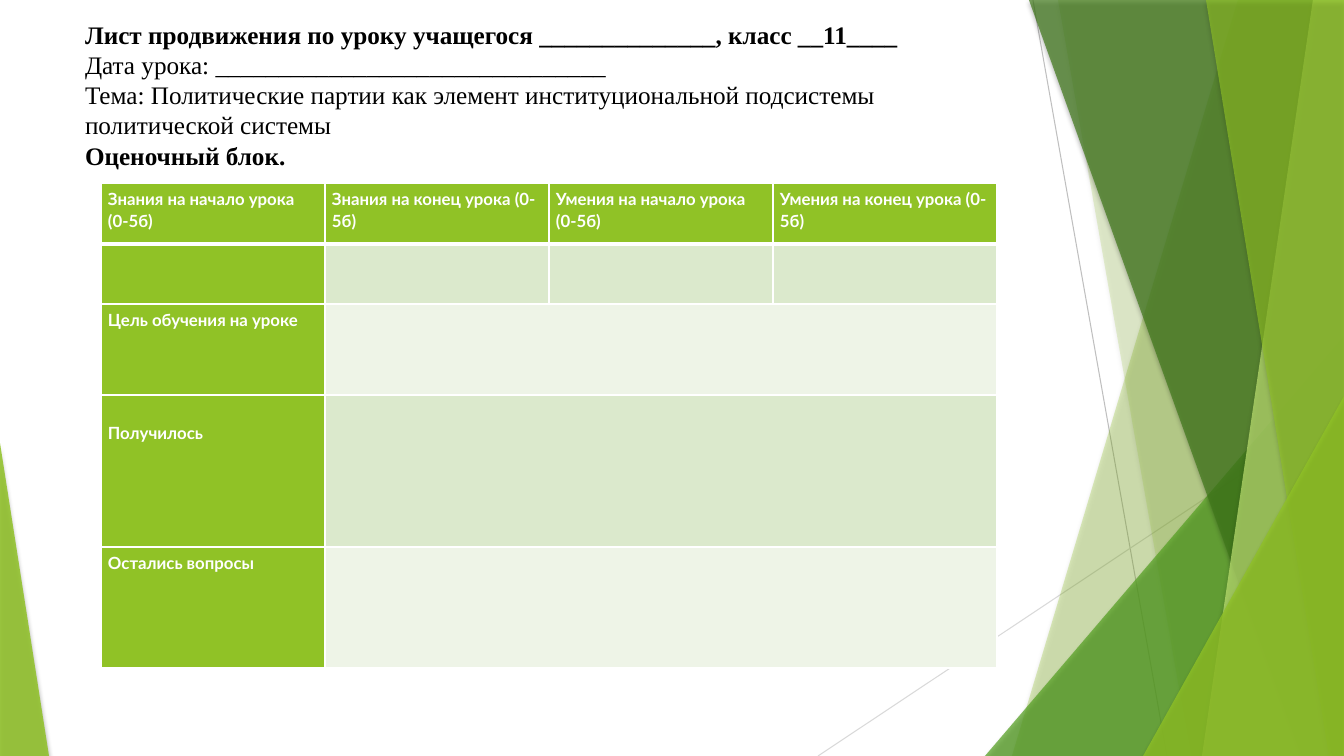
from lxml import etree
from pptx import Presentation
from pptx import util as u
from pptx.dml.color import RGBColor
from pptx.enum import shapes, text
from pptx.oxml.ns import qn

WIDTH, HEIGHT = 1344, 756
COLORS = {
    "black": "000000", "white": "FFFFFF", "lime": "90C226", "green": "54A021",
    "forest": "3F7819", "pale lime": "C0E474", "band dark": "DBE9CC",
    "band light": "EEF4E7", "gray": "BFBFBF", "light gray": "D9D9D9",
}
HEADING = [
    ("Лист продвижения по уроку учащегося ______________, класс __11____", True),
    ("Дата урока: _______________________________", False),
    ("Тема: Политические партии как элемент институциональной подсистемы "
     "политической системы", False),
    ("Оценочный блок.", True),
]
COLUMN_HEADS = [
    "Знания на начало урока (0-5б)", "Знания на конец урока (0-5б)",
    "Умения на начало урока (0-5б)", "Умения на конец урока (0-5б)",
]
ROW_HEADS = {2: "Цель обучения на уроке", 3: "Получилось", 4: "Остались вопросы"}
ROW_HEIGHTS = [61, 60, 91, 152, 121]
COLUMN_WIDTH = 224
EXTRA_TOP = {3: 22}


def px(value):
    return u.Emu(round(value * 914400 / 100.8))


def rgb(name):
    return RGBColor.from_string(COLORS[name])


def add_color(parent, name, alpha=None):
    color = etree.SubElement(parent, qn("a:srgbClr"), val=COLORS[name])
    if alpha is not None:
        etree.SubElement(color, qn("a:alpha"), val=str(alpha * 1000))


class FacetSlide:
    """Draws green facets, text and tables on one slide."""

    def __init__(self, slide):
        self.slide = slide
        self.shapes = slide.shapes

    def line(self, start, end, color):
        line = self.shapes.add_connector(
            shapes.MSO_CONNECTOR.STRAIGHT, *map(px, start + end))
        line.line.color.rgb = rgb(color)
        line.line.width = u.Pt(0.75)
        etree.SubElement(line._element.spPr, qn("a:effectLst"))

    def paint(self, shape, color, alpha):
        """Give a facet its translucent fill and soft shadow."""
        shape.fill.solid()
        shape.fill.fore_color.rgb = rgb(color)
        shape.line.fill.background()
        shape.shadow.inherit = False
        properties = shape._element.spPr
        fill_color = properties.find(qn("a:solidFill")).find(qn("a:srgbClr"))
        etree.SubElement(fill_color, qn("a:alpha"), val=str(alpha * 1000))
        shadow = etree.SubElement(
            properties.find(qn("a:effectLst")), qn("a:outerShdw"),
            blurRad=str(u.Pt(3)), dist=str(u.Pt(2)), dir="5400000", rotWithShape="0")
        add_color(shadow, "black", 35)

    def facet(self, top_x, bottom_x, color, alpha):
        """Fill from a slanted left edge to the right side of the slide."""
        builder = self.shapes.build_freeform(px(top_x), px(0))
        corners = [(WIDTH, 0), (WIDTH, HEIGHT), (bottom_x, HEIGHT)]
        builder.add_line_segments([(px(x), px(y)) for x, y in corners], close=True)
        self.paint(builder.convert_to_shape(), color, alpha)

    def triangle(self, left, top, width, peak, color, alpha):
        """Stand a triangle on the bottom edge; peak is 0 (left) to 1 (right)."""
        shape = self.shapes.add_shape(
            shapes.MSO_SHAPE.ISOSCELES_TRIANGLE,
            px(left), px(top), px(width), px(HEIGHT - top))
        shape.adjustments[0] = peak
        self.paint(shape, color, alpha)

    def heading(self, left, top, width, height, lines):
        box = self.shapes.add_textbox(px(left), px(top), px(width), px(height))
        frame = box.text_frame
        frame.word_wrap = True
        frame.vertical_anchor = text.MSO_ANCHOR.TOP
        frame.margin_left, frame.margin_right = px(10), px(20)
        frame.margin_top = frame.margin_bottom = px(5)
        for index, (words, bold) in enumerate(lines):
            para = frame.add_paragraph() if index else frame.paragraphs[0]
            para.text = words
            para.line_spacing = u.Pt(21.6)
            para.font.name = "Times New Roman"
            para.font.size = u.Pt(18)
            para.font.bold = bold
            para.font.color.rgb = rgb("black")

    def cell(self, cell, fill, thick_side=None):
        properties = cell._tc.get_or_add_tcPr()
        for side in ("lnL", "lnR", "lnT", "lnB"):
            width = u.Pt(3 if side == thick_side else 0.96)
            border = etree.SubElement(properties, qn("a:" + side), w=str(width))
            add_color(etree.SubElement(border, qn("a:solidFill")), "white")
        cell.fill.solid()
        cell.fill.fore_color.rgb = rgb(fill)

    def cell_text(self, cell, words, extra_top=0):
        cell.margin_left = cell.margin_right = px(7)
        cell.margin_top, cell.margin_bottom = px(5 + extra_top), px(5)
        para = cell.text_frame.paragraphs[0]
        para.text = words
        para.line_spacing = 1.07
        para.font.name = "Lato"
        para.font.size = u.Pt(12)
        para.font.bold = True
        para.font.color.rgb = rgb("white")

    def assessment_table(self, left, top):
        columns = len(COLUMN_HEADS)
        table = self.shapes.add_table(
            len(ROW_HEIGHTS), columns, px(left), px(top),
            px(COLUMN_WIDTH * columns), px(sum(ROW_HEIGHTS))).table
        for column in table.columns:
            column.width = px(COLUMN_WIDTH)
        for row, height in enumerate(ROW_HEIGHTS):
            table.rows[row].height = px(height)
            band = "band dark" if row % 2 else "band light"
            for column in range(columns):
                fill = "lime" if row == 0 or column == 0 else band
                self.cell(table.cell(row, column), fill, {0: "lnB", 1: "lnT"}.get(row))
        for column, words in enumerate(COLUMN_HEADS):
            self.cell_text(table.cell(0, column), words)
        for row, words in ROW_HEADS.items():
            self.cell_text(table.cell(row, 0), words, EXTRA_TOP.get(row, 0))
            table.cell(row, 1).merge(table.cell(row, columns - 1))


def main():
    deck = Presentation()
    deck.slide_width, deck.slide_height = px(WIDTH), px(HEIGHT)
    page = FacetSlide(deck.slides.add_slide(deck.slide_layouts[6]))

    page.line((1033, 0), (1167, HEIGHT), "gray")
    page.line((WIDTH, 406), (818, HEIGHT), "light gray")
    page.facet(1238, 1012, "lime", 30)
    page.facet(1058, 1191, "lime", 20)
    page.triangle(985, 336, 359, 1, "green", 72)
    page.facet(1029, 1301, "forest", 70)
    page.facet(1313, 1202, "pale lime", 70)
    page.facet(1206, 1329, "lime", 65)
    page.triangle(1143, 396, 201, 1, "lime", 80)
    page.triangle(0, 443, 49, 0, "lime", 85)

    page.heading(75, 14, 947, 199, HEADING)
    page.assessment_table(101, 183)
    deck.save("out.pptx")


if __name__ == "__main__":
    main()
